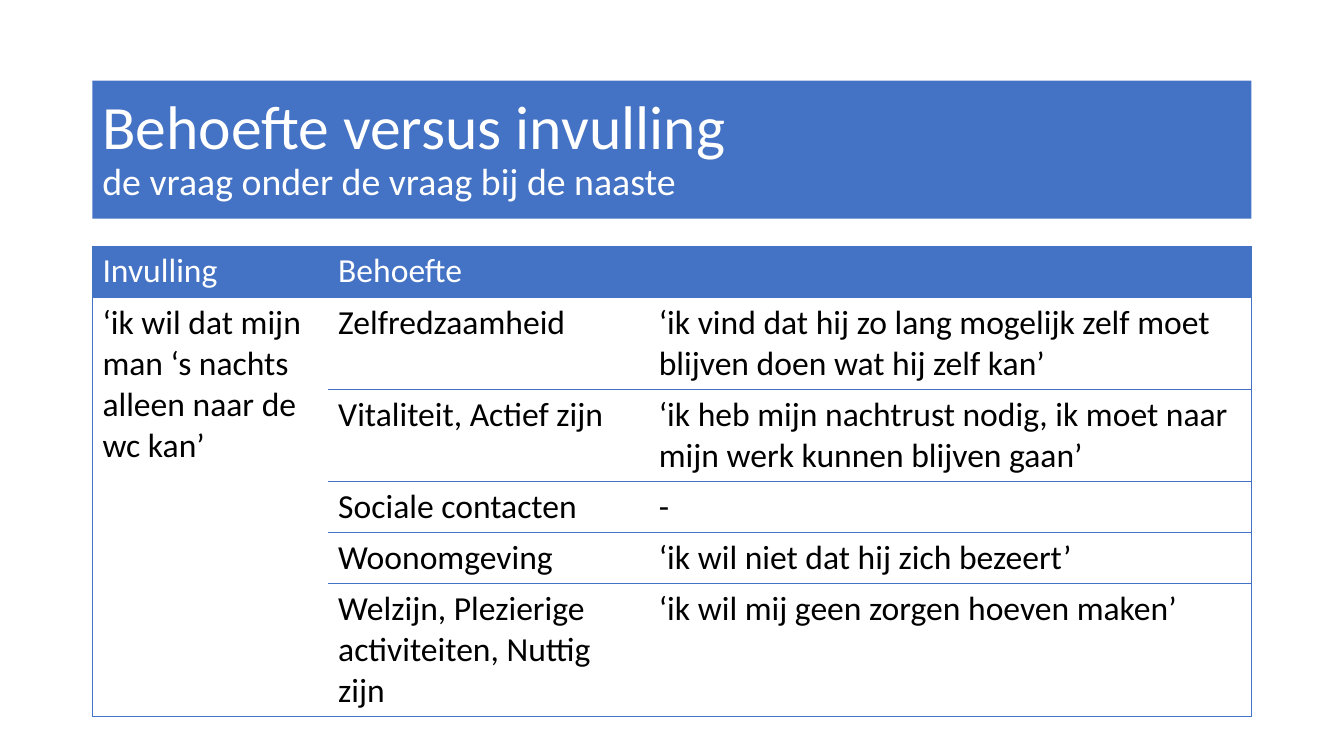
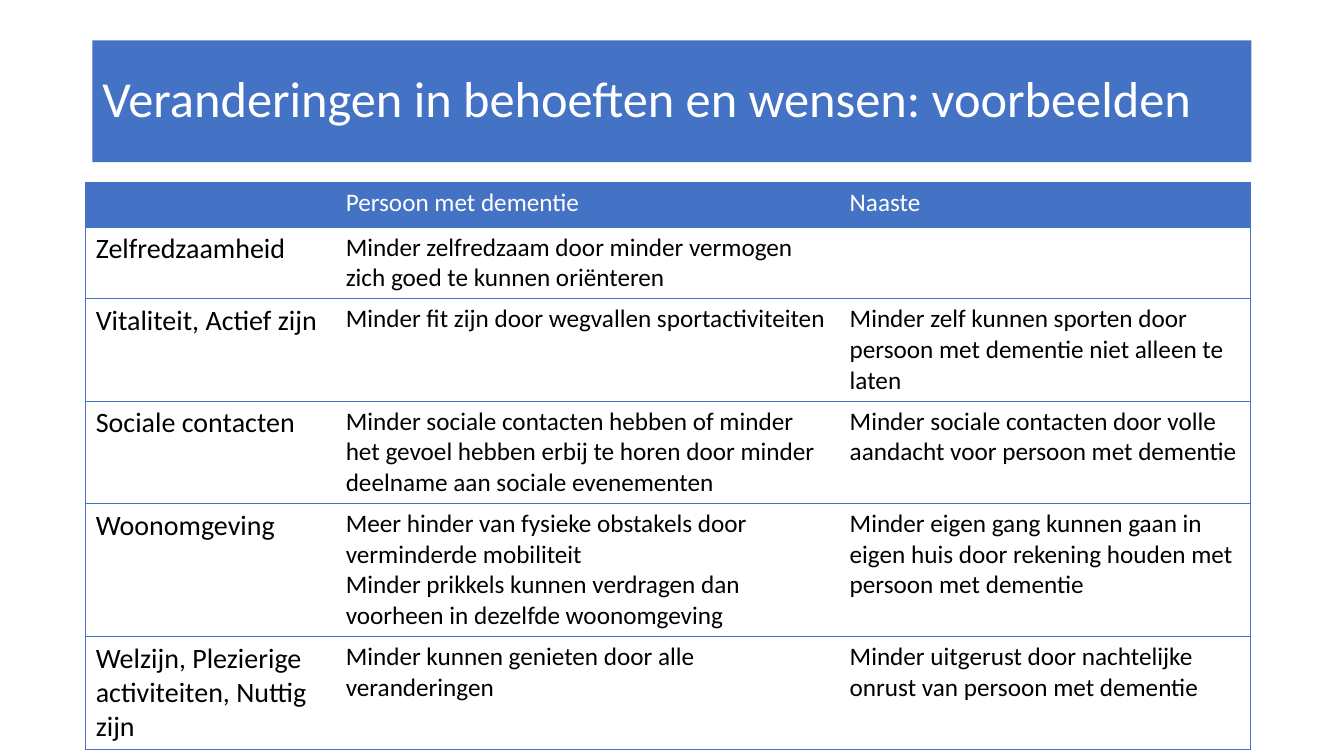
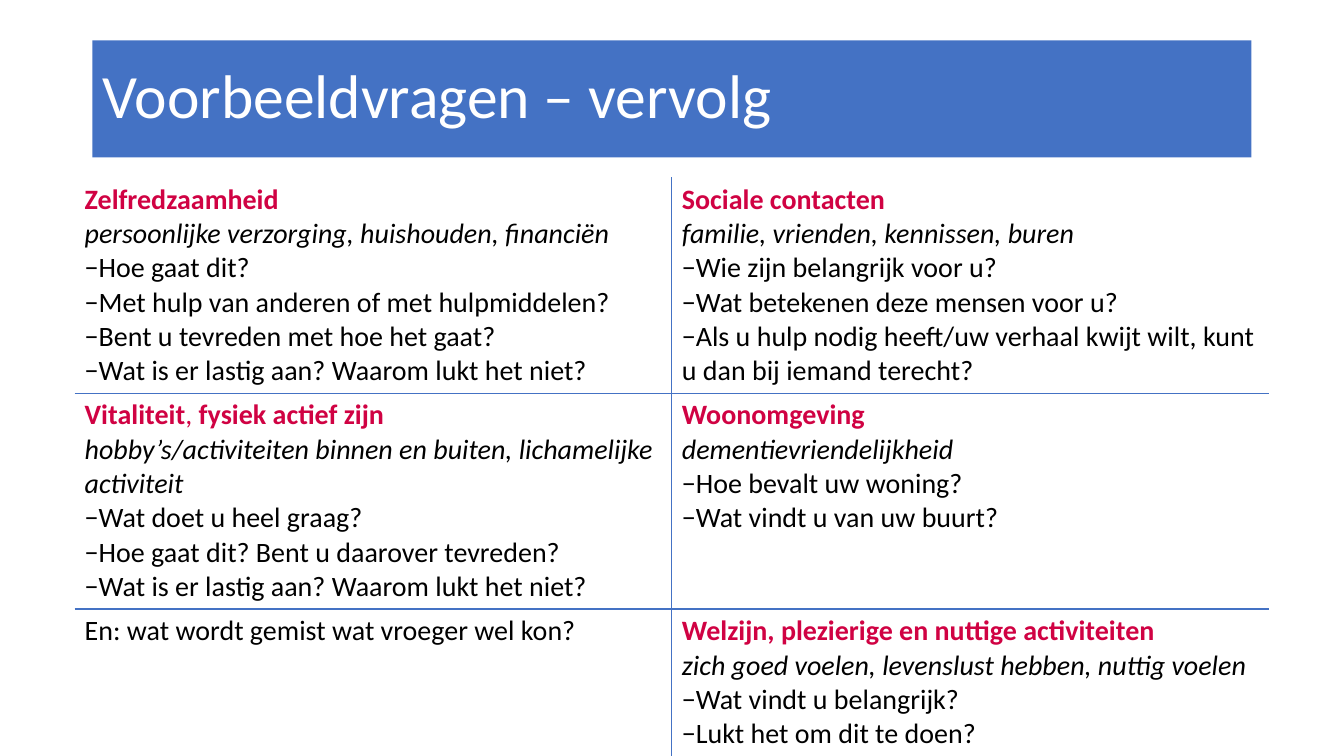
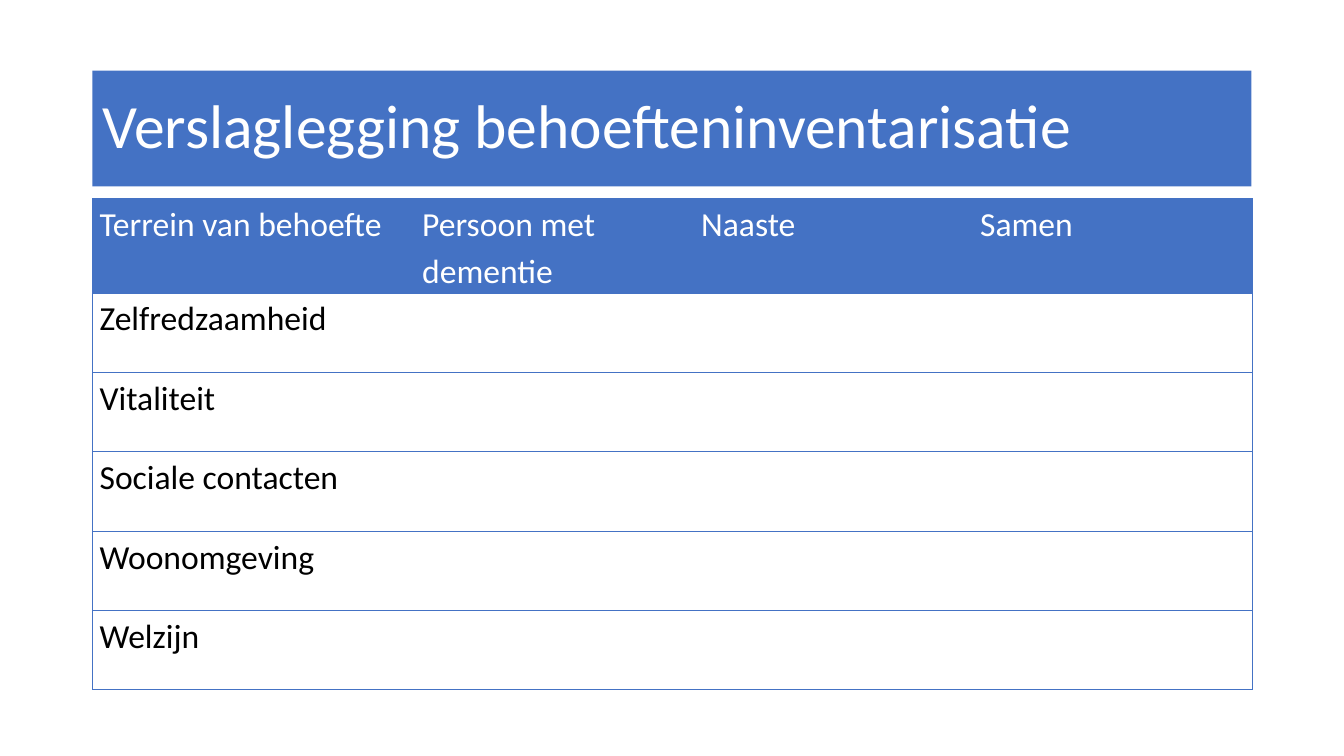
from lxml import etree
from pptx import Presentation
from pptx.dml.color import RGBColor
from pptx.enum import shapes, text
from pptx.oxml.ns import qn
from pptx.util import Cm, Pt

BLUE = RGBColor(0x44, 0x72, 0xC4)
RED = RGBColor(0xD0, 0x02, 0x43)
WHITE = RGBColor(0xFF, 0xFF, 0xFF)
BLACK = RGBColor(0, 0, 0)
FONT = "Calibri"
NO_STYLE = "{2D5ABB26-0587-4C30-8999-92F81FD0307C}"
BAND_LEFT, BAND_WIDTH = 2.33, 29.21

# Content
NEEDS = ["Zelfredzaamheid", "Vitaliteit, Actief zijn", "Sociale contacten",
         "Woonomgeving", "Welzijn, Plezierige activiteiten, Nuttig zijn"]

WISH = "‘ik wil dat mijn man ‘s nachts alleen naar de wc kan’"
REASONS = [
    "‘ik vind dat hij zo lang mogelijk zelf moet blijven doen wat hij zelf kan’",
    "‘ik heb mijn nachtrust nodig, ik moet naar mijn werk kunnen blijven gaan’",
    "-",
    "‘ik wil niet dat hij zich bezeert’",
    "‘ik wil mij geen zorgen hoeven maken’",
]
WISH_ROWS = [("Invulling", "Behoefte", "")] + [
    ("" if i else WISH, need, reason)
    for i, (need, reason) in enumerate(zip(NEEDS, REASONS))]

CHANGES = [
    ("Minder zelfredzaam door minder vermogen zich goed te kunnen oriënteren", ""),
    ("Minder fit zijn door wegvallen sportactiviteiten",
     "Minder zelf kunnen sporten door persoon met dementie niet alleen te laten"),
    ("Minder sociale contacten hebben of minder het gevoel hebben erbij te horen "
     "door minder deelname aan sociale evenementen",
     "Minder sociale contacten door volle aandacht voor persoon met dementie"),
    ("Meer hinder van fysieke obstakels door verminderde mobiliteit\n"
     "Minder prikkels kunnen verdragen dan voorheen in dezelfde woonomgeving",
     "Minder eigen gang kunnen gaan in eigen huis door rekening houden met "
     "persoon met dementie"),
    ("Minder kunnen genieten door alle veranderingen",
     "Minder uitgerust door nachtelijke onrust van persoon met dementie"),
]
CHANGE_ROWS = [("", "Persoon met dementie", "Naaste")] + [
    (need, *change) for need, change in zip(NEEDS, CHANGES)]

# Each topic: heading runs, explanation, questions
TOPICS = [
    [(["Zelfredzaamheid"], "persoonlijke verzorging, huishouden, financiën",
      ["Hoe gaat dit?", "Met hulp van anderen of met hulpmiddelen?",
       "Bent u tevreden met hoe het gaat?",
       "Wat is er lastig aan? Waarom lukt het niet?"]),
     (["Sociale contacten"], "familie, vrienden, kennissen, buren",
      ["Wie zijn belangrijk voor u?", "Wat betekenen deze mensen voor u?",
       "Als u hulp nodig heeft/uw verhaal kwijt wilt, kunt u dan bij iemand terecht?"])],
    [(["Vitaliteit", ", ", "fysiek actief zijn"],
      "hobby’s/activiteiten binnen en buiten, lichamelijke activiteit",
      ["Wat doet u heel graag?", "Hoe gaat dit? Bent u daarover tevreden?",
       "Wat is er lastig aan? Waarom lukt het niet?"]),
     (["Woonomgeving"], "dementievriendelijkheid",
      ["Hoe bevalt uw woning?", "Wat vindt u van uw buurt?"])],
    ["En: wat wordt gemist wat vroeger wel kon?",
     (["Welzijn, plezierige en nuttige activiteiten"],
      "zich goed voelen, levenslust hebben, nuttig voelen",
      ["Wat vindt u belangrijk?", "Lukt het om dit te doen?"])],
]

REPORT_ROWS = [("Terrein van behoefte", "Persoon met dementie", "Naaste", "Samen")] + [
    (area, "", "", "") for area in
    ("Zelfredzaamheid", "Vitaliteit", "Sociale contacten", "Woonomgeving", "Welzijn")]


def style(r, size, color, bold=False, italic=False):
    f = r.font
    f.name, f.size, f.bold, f.italic = FONT, Pt(size), bold, italic
    f.color.rgb = color


def row_heights(lines, size):
    """Heights in cm of rows that hold the given numbers of text lines."""
    return [round(n * size * 0.043 + 0.25, 2) for n in lines]


def add_slide(prs, lines, top, height, sizes=(44,)):
    """A slide with its title band."""
    s = prs.slides.add_slide(prs.slide_layouts[6])
    sp = s.shapes.add_shape(shapes.MSO_SHAPE.RECTANGLE, Cm(BAND_LEFT), Cm(top),
                            Cm(BAND_WIDTH), Cm(height))
    sp.shadow.inherit = False
    sp.fill.solid()
    sp.fill.fore_color.rgb = BLUE
    sp.line.fill.background()
    tf = sp.text_frame
    tf.word_wrap = True
    tf.vertical_anchor = text.MSO_ANCHOR.MIDDLE
    p = tf.paragraphs[0]
    p.text = "\v".join(lines)
    p.alignment = text.PP_ALIGN.LEFT
    p.line_spacing = 0.9
    for r, size in zip(p.runs, sizes):
        style(r, size, WHITE)
    return s


def set_borders(cell, sides, width):
    tc_pr = cell._tc.get_or_add_tcPr()
    for side in "LRTB":
        ln = etree.SubElement(tc_pr, qn(f"a:ln{side}"), w=str(Pt(width)))
        if side in sides:
            fill = etree.SubElement(ln, qn("a:solidFill"))
            etree.SubElement(fill, qn("a:srgbClr"), val=str(BLUE))
        else:
            etree.SubElement(ln, qn("a:noFill"))


def add_table(s, left, top, widths, heights, header=True, line=0.5):
    """With a header: framed, ruled rows. Without: only the inner lines."""
    rows, cols = len(heights), len(widths)
    table = s.shapes.add_table(rows, cols, Cm(left), Cm(top),
                               Cm(sum(widths)), Cm(sum(heights))).table
    table.first_row = table.horz_banding = False
    table._tbl.tblPr.find(qn("a:tableStyleId")).text = NO_STYLE
    for col, width in zip(table.columns, widths):
        col.width = Cm(width)
    for row, height in zip(table.rows, heights):
        row.height = Cm(height)
    for i in range(rows):
        for j in range(cols):
            cell = table.cell(i, j)
            edges = {"L": j == 0, "R": j == cols - 1, "T": i == 0, "B": i == rows - 1}
            sides = [side for side, outer in edges.items()
                     if (outer or side in "TB" if header else not outer)]
            set_borders(cell, sides, line)
            if header and i == 0:
                cell.fill.solid()
                cell.fill.fore_color.rgb = BLUE
            else:
                cell.fill.background()
    return table


def write_rows(table, rows, size, first_size=None, spacing=None):
    for i, row in enumerate(rows):
        for j, words in enumerate(row):
            if not words:
                continue
            tf = table.cell(i, j).text_frame
            tf.text = words
            for p in tf.paragraphs:
                if spacing:
                    p.line_spacing = spacing
                for r in p.runs:
                    style(r, first_size if first_size and j == 0 else size,
                          BLACK if i else WHITE)


def write_topic(cell, topic, size):
    tf = cell.text_frame
    if isinstance(topic, str):
        tf.text = topic
        style(tf.paragraphs[0].runs[0], size, BLACK)
        return
    heading, explanation, questions = topic
    for words in heading:
        r = tf.paragraphs[0].add_run()
        r.text = words
        style(r, size, RED, bold=words != ", ")
    for k, words in enumerate([explanation] + questions):
        p = tf.add_paragraph()
        p.text = words
        style(p.runs[0], size, BLACK, italic=k == 0)
        if k:
            p_pr = p._p.get_or_add_pPr()
            p_pr.set("marL", "0")
            p_pr.set("indent", "0")
            etree.SubElement(p_pr, qn("a:buFont"), typeface=FONT)
            etree.SubElement(p_pr, qn("a:buChar"), char="−")


def main():
    prs = Presentation()
    prs.slide_width, prs.slide_height = Cm(33.87), Cm(19.05)

    # Need versus wish
    s = add_slide(prs, ["Behoefte versus invulling",
                        "de vraag onder de vraag bij de naaste"], 2.03, 3.48, (44, 27))
    table = add_table(s, BAND_LEFT, 6.2, [5.94, 8.08, 15.19],
                      row_heights([1, 2, 2, 1, 1, 3], 24))
    table.cell(0, 1).merge(table.cell(0, 2))
    table.cell(1, 0).merge(table.cell(5, 0))
    write_rows(table, WISH_ROWS, 24)

    # Changes in needs
    s = add_slide(prs, ["Veranderingen in behoeften en wensen: voorbeelden"],
                  1.02, 3.07, (36,))
    heights = [1.12] + row_heights([2, 3, 3, 4], 18) + row_heights([3], 20)
    table = add_table(s, 2.16, 4.6, [6.3, 12.7, 10.36], heights)
    write_rows(table, CHANGE_ROWS, 18, first_size=20)

    # Example questions
    s = add_slide(prs, ["Voorbeeldvragen – vervolg"], 1.02, 2.95)
    table = add_table(s, 1.88, 4.47, [15.05] * 2, row_heights([6, 6, 4], 20),
                      header=False, line=1)
    for i, row in enumerate(TOPICS):
        for j, topic in enumerate(row):
            write_topic(table.cell(i, j), topic, 20)

    # Report form
    s = add_slide(prs, ["Verslaglegging behoefteninventarisatie"], 1.78, 2.92)
    table = add_table(s, BAND_LEFT, 5, [8.13] + [7.03] * 3, [2.38] + [2] * 5)
    for cell in table.iter_cells():
        cell.margin_left = cell.margin_right = Cm(0.18)
        cell.margin_top = cell.margin_bottom = 0
    write_rows(table, REPORT_ROWS, 24, spacing=1.15)

    prs.save("out.pptx")


if __name__ == "__main__":
    main()
